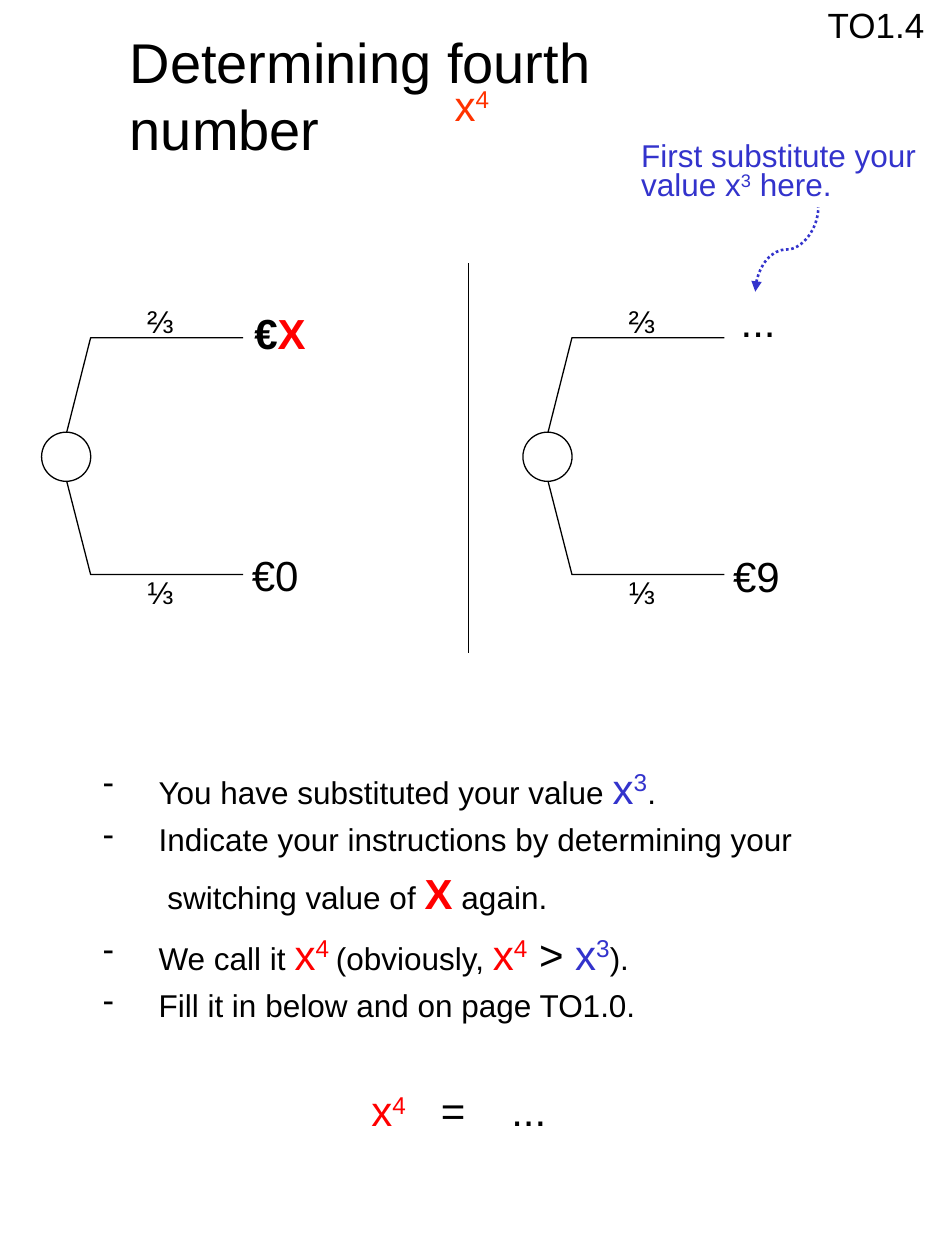
"""Build the slide that asks for the fourth number of the tradeoff task."""
import pptx
import pptx.dml.color
import pptx.enum.dml
import pptx.enum.shapes
import pptx.enum.text
import pptx.oxml.ns
import pptx.util
from lxml import etree

Inches = pptx.util.Inches
Pt = pptx.util.Pt
qn = pptx.oxml.ns.qn
BLACK = pptx.dml.color.RGBColor(0x00, 0x00, 0x00)
WHITE = pptx.dml.color.RGBColor(0xFF, 0xFF, 0xFF)
RED = pptx.dml.color.RGBColor(0xFF, 0x00, 0x00)
ORANGE = pptx.dml.color.RGBColor(0xFF, 0x33, 0x00)
BLUE = pptx.dml.color.RGBColor(0x33, 0x33, 0xCC)
BOLD, SUPER, BREAK = "bold", "super", "break"


def power(exponent, color):
    return [("x", 24, color), (exponent, 24, color, SUPER)]


TITLE = "Determining fourth number"
LABELS = [
    ((3.51, 0.58, 0.5, 0.5), [power("4", ORANGE)]),
    ((6.47, -0.02, 0.97, 0.43), [[("TO1.4", 20, BLACK)]]),
    ((1.92, 2.39, 0.61, 0.5), [[("€", 24, BLACK, BOLD), ("X", 24, RED, BOLD)]]),
    ((1.9, 4.31, 0.57, 0.5), [[("€0", 24, BLACK)]]),
    ((5.78, 2.3, 0.48, 0.5), [[("...", 24, BLACK)]]),
    ((5.72, 4.32, 0.57, 0.5), [[("€9", 24, BLACK)]]),
]
HINT = [
    [("First substitute your", 18, BLUE)],
    [("value x", 18, BLUE), ("3", 18, BLUE, SUPER), (" here.", 18, BLUE)],
]
STEPS = [
    [("You have substituted your value ", 18, BLACK), *power("3", BLUE), (".", 18, BLACK)],
    [("Indicate your instructions by determining your", 18, BLACK),
     (" switching value of ", 18, BLACK, BREAK), ("X", 24, RED, BOLD), (" again.", 18, BLACK)],
    [("We call it ", 18, BLACK), *power("4 ", RED), ("(obviously, ", 18, BLACK),
     *power("4", RED), (" > ", 24, BLACK), *power("3", BLUE), (").", 18, BLACK)],
    [("Fill it in below and on page TO1.0.", 18, BLACK)],
]
ANSWER = [[*power("4", RED), ("\t=\t...", 24, BLACK)]]
ANSWER_TABS = (0.55, 1.11)
TREE_LEFTS = (0.33, 4.15)
BRANCHES = [("⅔", 2.35, 3.43, 2.68), ("⅓", 4.5, 3.82, 4.56)]


def add_text(slide, box, lines, wrap=False):
    frame = slide.shapes.add_textbox(*map(Inches, box)).text_frame
    frame.word_wrap = wrap
    for index, line in enumerate(lines):
        paragraph = frame.add_paragraph() if index else frame.paragraphs[0]
        for text, size, color, *marks in line:
            if BREAK in marks:
                paragraph.add_line_break()
            run = paragraph.add_run()
            run.text = text
            run.font.name = "Arial"
            run.font.size = Pt(size)
            run.font.color.rgb = color
            run.font.bold = BOLD in marks
            if SUPER in marks:
                run._r.get_or_add_rPr().set("baseline", "30000")
    return frame.paragraphs


def style_line(line, color=BLACK, width=0.75):
    line.color.rgb = color
    line.width = Pt(width)


def add_line(slide, kind, start, end):
    connector = slide.shapes.add_connector(kind, *map(Inches, start + end))
    etree.SubElement(connector._element.spPr, qn("a:effectLst"))
    return connector


def add_tree(slide, left):
    center = left + 0.2
    for chance, label_top, circle_edge, branch_y in BRANCHES:
        add_text(slide, (left + 0.74, label_top, 0.5, 0.4), [[(chance, 18, BLACK)]])
        builder = slide.shapes.build_freeform(
            Inches(center), Inches(circle_edge), scale=1.0)
        builder.add_line_segments(
            [(Inches(left + x), Inches(branch_y)) for x in (0.39, 1.6)], close=False)
        branch = builder.convert_to_shape()
        branch.shadow.inherit = False
        branch.fill.background()
        style_line(branch.line)
    circle = slide.shapes.add_shape(
        pptx.enum.shapes.MSO_SHAPE.OVAL, *map(Inches, (left, 3.43, 0.39, 0.39)))
    circle.shadow.inherit = False
    circle.fill.solid()
    circle.fill.fore_color.rgb = WHITE
    style_line(circle.line)


def add_title(slide):
    title = slide.shapes.title
    title.left, title.top, title.width, title.height = map(Inches, (0.93, 0.17, 4.5, 1.2))
    frame = title.text_frame
    frame.text = TITLE
    frame.word_wrap = True
    frame.auto_size = pptx.enum.text.MSO_AUTO_SIZE.NONE
    frame.vertical_anchor = pptx.enum.text.MSO_ANCHOR.TOP
    frame.paragraphs[0].alignment = pptx.enum.text.PP_ALIGN.LEFT
    font = frame.paragraphs[0].runs[0].font
    font.name, font.size, font.color.rgb = "Arial", Pt(32), BLACK


def add_hint(slide):
    for paragraph, spacing in zip(add_text(slide, (4.99, 1.11, 2.38, 0.55), HINT), (0.7, 0.8)):
        paragraph.line_spacing = spacing
    arrow = add_line(slide, pptx.enum.shapes.MSO_CONNECTOR.CURVE, (5.91, 1.73), (6.58, 2.23))
    arrow._element.spPr.find(qn("a:xfrm")).set("rot", "16200000")
    style_line(arrow.line, BLUE, 1.5)
    arrow.line.dash_style = pptx.enum.dml.MSO_LINE.ROUND_DOT
    etree.SubElement(arrow.line._get_or_add_ln(), qn("a:headEnd"), type="triangle")


def add_steps(slide):
    for paragraph in add_text(slide, (0.72, 5.92, 5.88, 2.26), STEPS, wrap=True):
        paragraph.line_spacing = 1.2
        properties = paragraph._p.get_or_add_pPr()
        properties.set("marL", str(Inches(0.44)))
        properties.set("indent", str(-Inches(0.44)))
        etree.SubElement(properties, qn("a:buChar"), char="-")


def add_answer(slide):
    paragraph = add_text(slide, (2.85, 8.56, 1.8, 0.5), ANSWER, wrap=True)[0]
    stops = etree.SubElement(paragraph._p.get_or_add_pPr(), qn("a:tabLst"))
    for stop in ANSWER_TABS:
        etree.SubElement(stops, qn("a:tab"), pos=str(Inches(stop)), algn="l")


def main():
    deck = pptx.Presentation()
    deck.slide_width, deck.slide_height = Inches(7.5), Inches(10)
    slide = deck.slides.add_slide(deck.slide_layouts[5])
    add_title(slide)
    for box, lines in LABELS:
        add_text(slide, box, lines)
    for left in TREE_LEFTS:
        add_tree(slide, left)
    divider = add_line(
        slide, pptx.enum.shapes.MSO_CONNECTOR.STRAIGHT, (3.72, 2.09), (3.72, 5.18))
    style_line(divider.line)
    add_hint(slide)
    add_steps(slide)
    add_answer(slide)
    deck.save("out.pptx")


if __name__ == "__main__":
    main()
